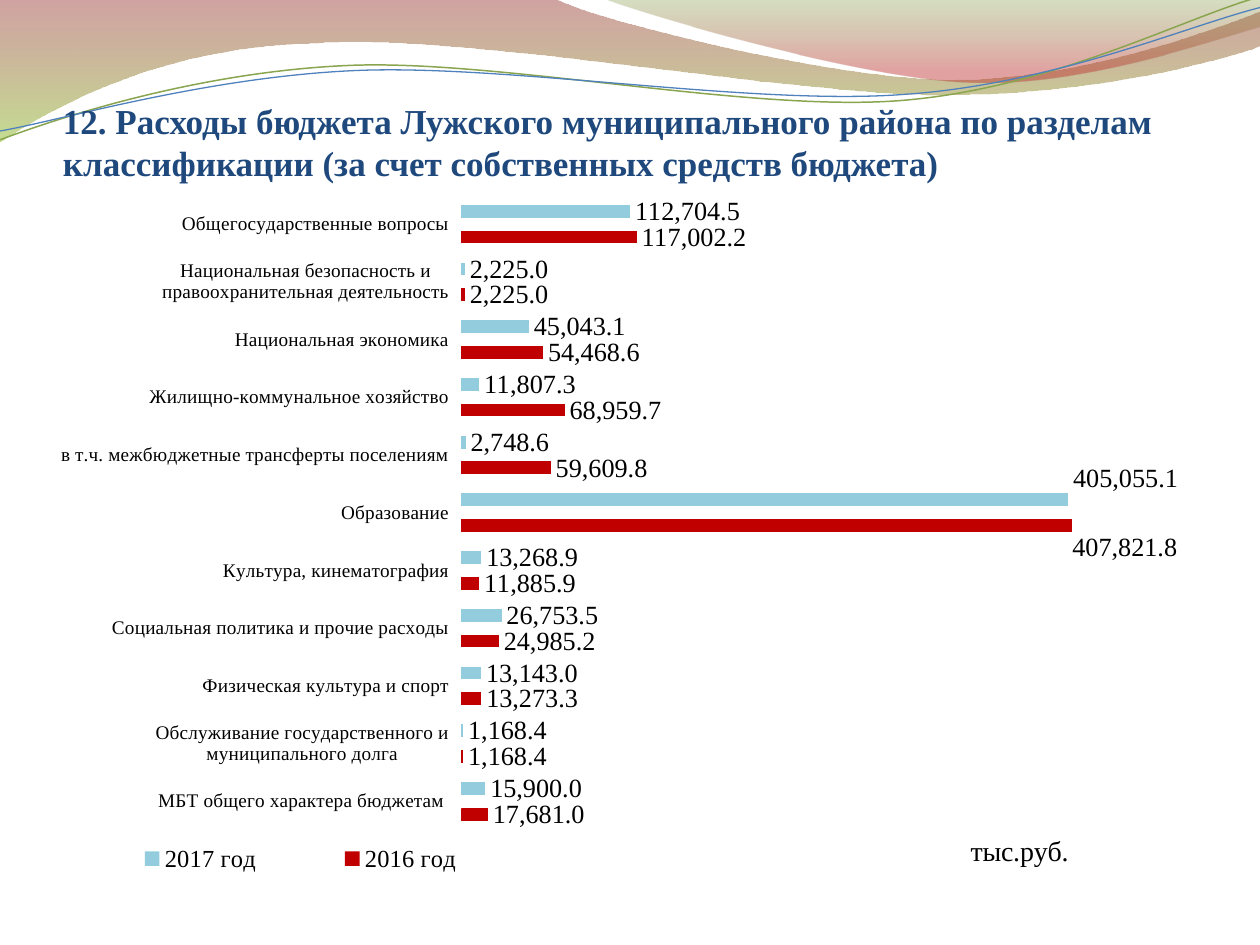
import pptx
import pptx.chart.data
import pptx.dml.color
import pptx.enum.chart
import pptx.enum.text
import pptx.oxml
import pptx.oxml.ns
import pptx.util
from lxml import etree
from pptx.util import Inches, Pt

COLORS = {
    "title": "1F497D", "text": "000000", "white": "FFFFFF",
    "year_2016": "C00000", "spacer": "C0504D", "year_2017": "93CDDD",
    "wave_red": "973330", "wave_lime": "95C238",
    "wave_olive": "769537", "wave_coral": "BE3330",
    "green_line": "89A54F", "blue_line": "4F81BD",
}
FONT = "Times New Roman"
NUMBER_FORMAT = "#,##0.0"
CHART_WIDTH, CHART_HEIGHT = 9, 5.59

# Each outline: start point, then segments of one point (line) or three (curve).
LARGE_WAVE = ((0, 0), [
    [(4.4, -0.01)],
    [(4.76, 0.17), (6.64, 0.63), (7.58, 0.63)],
    [(8.53, 0.63), (9.58, 0.26), (10, 0.09)],
    [(10.01, 0.36)],
    [(9.83, 0.44), (8.7, 0.76), (7.46, 0.75)],
    [(6.22, 0.75), (3.82, 0.28), (2.57, 0.34)],
    [(1.29, 0.36), (0.46, 0.83), (-0.01, 1.13)],
])
SMALL_WAVE = ((4.79, -0.01), [
    [(5.09, 0.11), (6.82, 0.62), (7.69, 0.65)],
    [(8.56, 0.69), (9.61, 0.32), (10, 0.21)],
    [(10, 0)],
])
GREEN_CURVE = ((0, 1.11), [
    [(0.48, 0.93), (1.58, 0.57), (2.77, 0.52)],
    [(3.95, 0.47), (5.93, 0.89), (7.13, 0.8)],
    [(8.33, 0.71), (9.38, 0.15), (9.98, -0.02)],
])
BLUE_CURVE = ((0, 1.04), [
    [(0.47, 0.96), (1.64, 0.61), (2.83, 0.56)],
    [(4.03, 0.51), (5.97, 0.84), (7.17, 0.75)],
    [(8.36, 0.67), (9.41, 0.21), (10, 0.06)],
])

# Category, 2016, 2017
EXPENSES = [
    ("МБТ общего характера бюджетам ", 17681, 15900),
    ("Обслуживание государственного и муниципального долга", 1168.4, 1168.4),
    ("Физическая культура и спорт", 13273.3, 13143),
    ("Социальная политика и прочие расходы", 24985.2, 26753.5),
    ("Культура, кинематография", 11885.9, 13268.9),
    ("Образование", 407821.8, 405055.1),
    ("в т.ч. межбюджетные трансферты поселениям", 59609.8, 2748.6),
    ("Жилищно-коммунальное хозяйство", 68959.7, 11807.3),
    ("Национальная экономика", 54468.6, 45043.1),
    ("Национальная безопасность и правоохранительная деятельность", 2225, 2225),
    ("Общегосударственные вопросы", 117002.2, 112704.5),
]
EDUCATION = 5


def rgb(name):
    return pptx.dml.color.RGBColor.from_string(COLORS[name])


def set_font(font, size, color="text", bold=False):
    font.name, font.size, font.bold = FONT, Pt(size), bold
    font.color.rgb = rgb(color)


def add_curve(slide, left, top, outline, close):
    start, segments = outline

    def place(point):
        return left + Inches(point[0]), top + Inches(point[1])

    builder = slide.shapes.build_freeform(*place(start))
    builder.add_line_segments([place(p) for s in segments for p in s], close=close)
    shape = builder.convert_to_shape()
    shape.shadow.inherit = False
    lines = iter(shape._element.xpath(".//a:path/a:lnTo"))
    for segment in segments:
        group = [next(lines) for _ in segment]
        if len(group) == 3:
            bezier = etree.Element(pptx.oxml.ns.qn("a:cubicBezTo"))
            group[0].addprevious(bezier)
            for line in group:
                bezier.append(line[0])
                line.getparent().remove(line)
    return shape


def add_wave(slide, left, top, outline, stops):
    """Add a closed wave; stops hold position, colour and opacity percent."""
    shape = add_curve(slide, left, top, outline, True)
    shape.line.fill.background()
    shape.fill.gradient()
    shape.fill.gradient_angle = 270
    for stop, (position, color, opacity) in zip(shape.fill.gradient_stops, stops):
        stop.position = position
        stop.color.rgb = rgb(color)
    for element, stop in zip(shape._element.xpath(".//a:gs/a:srgbClr"), stops):
        alpha = etree.SubElement(element, pptx.oxml.ns.qn("a:alpha"))
        alpha.set("val", str(stop[2] * 1000))


def add_header_waves(slide, left, top):
    add_wave(slide, left, top, LARGE_WAVE,
             [(0, "wave_red", 45), (1, "wave_lime", 55)])
    add_wave(slide, left, top, SMALL_WAVE,
             [(0, "wave_olive", 30), (0.8, "wave_coral", 45)])
    for outline, color, width in ((GREEN_CURVE, "green_line", 0.85),
                                  (BLUE_CURVE, "blue_line", 0.75)):
        shape = add_curve(slide, left, top, outline, False)
        shape.fill.background()
        shape.line.color.rgb = rgb(color)
        shape.line.width = Pt(width)


def add_title(slide, left, top, width, height):
    frame = slide.shapes.add_textbox(left, top, width, height).text_frame
    frame.word_wrap = True
    frame.vertical_anchor = pptx.enum.text.MSO_ANCHOR.BOTTOM
    frame.margin_left = frame.margin_right = frame.margin_bottom = 0
    paragraph = frame.paragraphs[0]
    paragraph.text = ("12. Расходы бюджета Лужского муниципального района по разделам "
                      "классификации (за счет собственных средств бюджета)")
    set_font(paragraph.font, 20, "title", True)


def make_layout(x, y, w=None, h=None, edges=True, inner=False):
    """Return a manual layout for a part of the chart, given in inches."""
    target = '<c:layoutTarget val="inner"/>' if inner else ""
    modes = '<c:xMode val="edge"/><c:yMode val="edge"/>' if edges else ""
    sizes = (("x", x, CHART_WIDTH), ("y", y, CHART_HEIGHT),
             ("w", w, CHART_WIDTH), ("h", h, CHART_HEIGHT))
    values = "".join(f'<c:{key} val="{size / whole:.4f}"/>'
                     for key, size, whole in sizes if size is not None)
    return pptx.oxml.parse_xml(
        f'<c:layout {pptx.oxml.ns.nsdecls("c")}><c:manualLayout>'
        f'{target}{modes}{values}</c:manualLayout></c:layout>')


def replace_layout(parent, index, layout):
    for old in parent.findall(pptx.oxml.ns.qn("c:layout")):
        parent.remove(old)
    parent.insert(index, layout)


def label_series(series, shift_x, shift_y):
    """Show values, moving the label of the education bar off its row."""
    position = pptx.enum.chart.XL_LABEL_POSITION.OUTSIDE_END
    labels = series.data_labels
    labels.show_value = True
    labels.number_format, labels.number_format_is_linked = NUMBER_FORMAT, False
    labels.position = position
    set_font(labels.font, 15)
    label = series.points[EDUCATION].data_label
    set_font(label.font, 15)
    label.position = position
    replace_layout(series._element.xpath("c:dLbls/c:dLbl")[0], 1,
                   make_layout(shift_x, shift_y, edges=False))


def add_expense_chart(slide, left, top, width, height):
    names, values_2016, values_2017 = zip(*EXPENSES)
    data = pptx.chart.data.CategoryChartData(number_format=NUMBER_FORMAT)
    data.categories = names
    data.add_series("2016 год", values_2016)
    data.add_series("Series 2", [0] + [None] * (len(names) - 1))
    data.add_series("2017 год", values_2017)
    chart = slide.shapes.add_chart(pptx.enum.chart.XL_CHART_TYPE.BAR_CLUSTERED,
                                   left, top, width, height, data).chart
    chart.has_title = False
    chart.font.name, chart.font.size = "TeX Gyre Pagella", Pt(18)
    chart.font.color.rgb = rgb("text")

    plot = chart.plots[0]
    plot.vary_by_categories = False
    plot.gap_width, plot.overlap = 150, 0
    for series, color in zip(plot.series, ("year_2016", "spacer", "year_2017")):
        series.format.fill.solid()
        series.format.fill.fore_color.rgb = rgb(color)
    spacer = plot.series[1]
    spacer.format.line.color.rgb = rgb("white")
    spacer.format.line.width = Pt(0.75)
    label_series(plot.series[0], -0.04, 0.17)
    label_series(plot.series[2], 0, -0.17)
    replace_layout(chart._chartSpace.xpath("c:chart/c:plotArea")[0], 0,
                   make_layout(3.32, 0.08, 4.86, 5.04, inner=True))

    category_axis, value_axis = chart.category_axis, chart.value_axis
    for axis in (category_axis, value_axis):
        axis.has_major_gridlines = False
        axis.format.line.fill.background()
    set_font(category_axis.tick_labels.font, 11)
    value_axis.minimum_scale, value_axis.maximum_scale = 0, 407850
    value_axis.tick_label_position = pptx.enum.chart.XL_TICK_LABEL_POSITION.NONE
    paragraph = value_axis.axis_title.text_frame.paragraphs[0]
    paragraph.text = "тыс.руб."
    set_font(paragraph.font, 16)
    replace_layout(value_axis._element.xpath("c:title")[0], 1, make_layout(7.33, 5.1))

    chart.has_legend = True
    legend = chart.legend
    legend.position = pptx.enum.chart.XL_LEGEND_POSITION.BOTTOM
    legend.include_in_layout = False
    set_font(legend.font, 14)
    replace_layout(legend._element, 1, make_layout(0.16, 5.17, 3.76, 0.35))
    legend._element.insert(1, pptx.oxml.parse_xml(
        f'<c:legendEntry {pptx.oxml.ns.nsdecls("c")}><c:idx val="1"/>'
        '<c:delete val="1"/></c:legendEntry>'))


presentation = pptx.Presentation()
presentation.slide_width, presentation.slide_height = Inches(10), Inches(7.5)
slide = presentation.slides.add_slide(presentation.slide_layouts[6])
add_header_waves(slide, 0, 0)
add_title(slide, Inches(0.5), Inches(0.76), Inches(9), Inches(0.7))
add_expense_chart(slide, Inches(0.35), Inches(1.47),
                  Inches(CHART_WIDTH), Inches(CHART_HEIGHT))
presentation.save("out.pptx")
